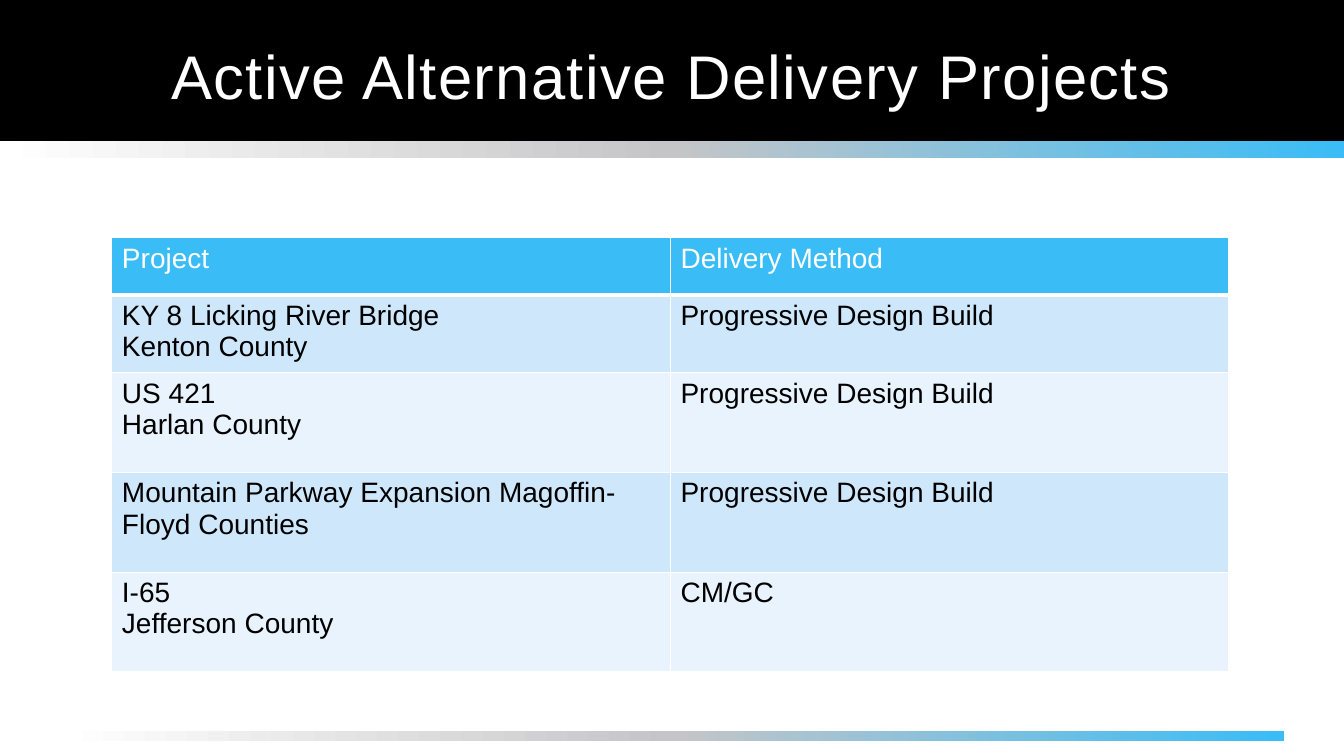
from copy import deepcopy

from lxml import etree
from pptx import Presentation
from pptx import util as u
from pptx.dml import color
from pptx.enum import shapes, text
from pptx.oxml import ns

PX = 9144
WIDE, HIGH = 1333, 750
WHITE, BLACK, SKY = "FFFFFF", "000000", "3ABCF6"
FADE = [WHITE, "C5C5C7", SKY]
BANDS = ["E8F3FD", "CEE7FB"]
PLAN = "Progressive Design Build"
ROWS = [
    (57, "Project", "Delivery Method"),
    (57, "KY 8 Licking River Bridge\nKenton County", PLAN),
    (99, "US 421\nHarlan County", PLAN),
    (99, "Mountain Parkway Expansion Magoffin-Floyd Counties", PLAN),
    (99, "I-65\nJefferson County", "CM/GC"),
]


def px(*nums):
    return [u.Emu(n * PX) for n in nums]


def rgb(code):
    return color.RGBColor.from_string(code)


class Deck:
    """Draws elements on one slide in a shared style."""

    font = "Arial"

    def __init__(self):
        self.file = Presentation()
        self.file.slide_width, self.file.slide_height = px(WIDE, HIGH)
        self.slide = self.file.slides.add_slide(self.file.slide_layouts[6])

    def style(self, frame, size, ink):
        for para in frame.paragraphs:
            for run in para.runs:
                run.font.name = self.font
                run.font.size = u.Pt(size)
                run.font.color.rgb = rgb(ink)

    def bar(self, box, hues):
        rect = self.slide.shapes.add_shape(shapes.MSO_SHAPE.RECTANGLE, *px(*box))
        rect.shadow.inherit = False
        rect.line.fill.background()
        if len(hues) == 1:
            rect.fill.solid()
            rect.fill.fore_color.rgb = rgb(hues[0])
            return
        rect.fill.gradient()
        rect.fill.gradient_angle = 0
        stops = rect._element.spPr.find(".//" + ns.qn("a:gsLst"))
        while len(stops) < len(hues):
            stops.append(deepcopy(stops[0]))
        for i, (stop, hue) in enumerate(zip(rect.fill.gradient_stops, hues)):
            stop.position = i / (len(hues) - 1)
            stop.color.rgb = rgb(hue)

    def title(self, box, words):
        frame = self.slide.shapes.add_textbox(*px(*box)).text_frame
        frame.word_wrap = True
        frame.vertical_anchor = text.MSO_ANCHOR.MIDDLE
        frame.text = words
        para = frame.paragraphs[0]
        para.alignment = text.PP_ALIGN.CENTER
        para.line_spacing = 0.9
        self.style(frame, 44, WHITE)
        para.runs[0].font._element.set("spc", "100")

    def edge(self, cell, side, width):
        line = etree.SubElement(cell._tc.get_or_add_tcPr(), ns.qn("a:ln" + side),
                                w=str(u.Pt(width)))
        fill = etree.SubElement(line, ns.qn("a:solidFill"))
        etree.SubElement(fill, ns.qn("a:srgbClr"), val=WHITE)

    def table(self, box, rows):
        cols = len(rows[0]) - 1
        grid = self.slide.shapes.add_table(len(rows), cols, *px(*box)).table
        for r, (high, *words) in enumerate(rows):
            grid.rows[r].height = px(high)[0]
            for c, word in enumerate(words):
                cell = grid.cell(r, c)
                for side in "LRTB":
                    self.edge(cell, side, 3 if r == 0 and side == "B" else 1)
                cell.fill.solid()
                cell.fill.fore_color.rgb = rgb(BANDS[r % 2] if r else SKY)
                cell.text_frame.text = word
                self.style(cell.text_frame, 20, BLACK if r else WHITE)


def main():
    deck = Deck()
    deck.bar((0, 0, WIDE, 140), [BLACK])
    deck.bar((0, 140, WIDE, 17), FADE)
    deck.bar((60, 725, 1214, 10), FADE)
    deck.title((0, 19, WIDE, 119), "Active Alternative Delivery Projects")
    deck.table((111, 236, 1108, sum(row[0] for row in ROWS)), ROWS)
    deck.file.save("out.pptx")


if __name__ == "__main__":
    main()
